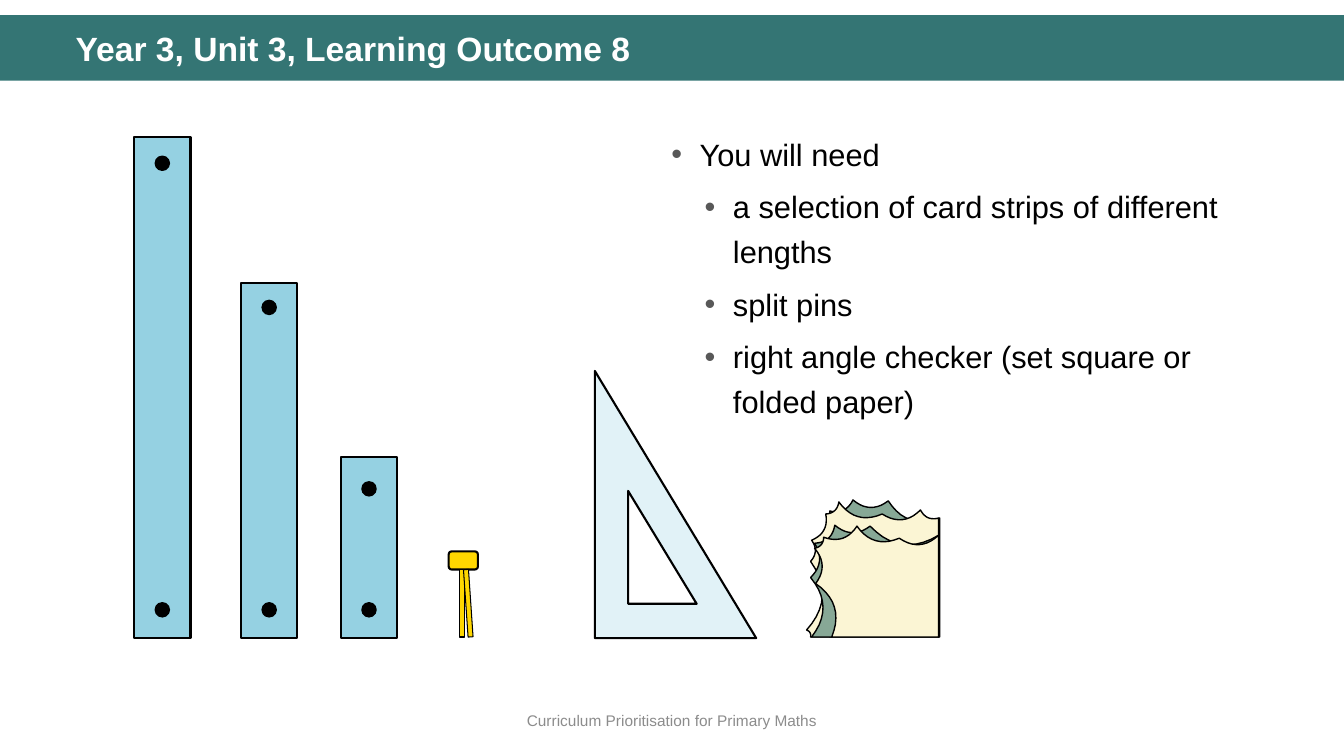
from dataclasses import dataclass
from typing import Optional

from lxml import etree
from pptx import Presentation
from pptx import util as u
from pptx.dml.color import RGBColor
from pptx.enum import shapes, text
from pptx.oxml import ns


@dataclass(frozen=True)
class Theme:
    font: str = "Arial"
    bar: str = "347574"
    white: str = "FFFFFF"
    ink: str = "000000"
    footer: str = "8C8C8C"
    bullet: str = "585858"
    strip: str = "95D1E2"
    pin: str = "FFD700"
    square: str = "B8E1EC"
    paper_front: str = "FBF5D4"
    paper_back: str = "87A896"
    title_size: float = 24
    body_size: float = 22
    footer_size: float = 11


@dataclass(frozen=True)
class Strip:
    left: float
    top: float
    hole_top: float


@dataclass(frozen=True)
class PaperLayer:
    """Tips of the torn edge, from bottom left to top right."""
    fill: str
    tips: list


THEME = Theme()
SHAPE = shapes.MSO_SHAPE
BASE = 6.33
STRIP_WIDTH, HOLE_SIZE, LOWER_HOLE_TOP = 0.56, 0.14, 5.98
STRIPS = [Strip(2.39, 2.81, 2.98), Strip(3.38, 4.53, 4.78), Strip(1.33, 1.36, 1.55)]
NEEDS = [
    (0, "You will need"),
    (1, "a selection of card strips of different lengths"),
    (1, "split pins"),
    (1, "right angle checker (set square or folded paper)"),
]
PAPER_BASE, TEAR_DEPTH = 6.32, 0.2
FOLDED_PAPER = [
    PaperLayer(THEME.paper_back, [(8.23, 5.07), (8.46, 4.96), (8.81, 4.97), (9.32, 5.14)]),
    PaperLayer(THEME.paper_front, [(8.04, 6.32), (8, 6.25), (8.04, 5.57), (8.05, 5.36), (8.19, 5.1),
                                   (8.32, 4.98), (8.75, 5.1), (9.13, 5.06), (9.31, 5.14)]),
    PaperLayer(THEME.paper_back, [(8.05, 6.32), (8.04, 5.73), (8.08, 5.39), (8.28, 5.21),
                                  (8.63, 5.22), (9.31, 5.31)]),
    PaperLayer(THEME.paper_front, [(8.25, 6.32), (8.09, 5.79), (8.08, 5.44), (8.17, 5.33),
                                   (8.5, 5.22), (8.92, 5.34), (9.31, 5.31)]),
]
SET_SQUARE = [[(6.23, 4.87), (6.23, 5.99), (6.91, 5.99)],
              [(5.9, 3.68), (7.5, BASE), (5.9, BASE)]]


def place(shape, left: float, top: float, width: float, height: float) -> None:
    shape.left, shape.top = u.Inches(left), u.Inches(top)
    shape.width, shape.height = u.Inches(width), u.Inches(height)


def paint(shape, fill: str, line_width: Optional[float] = None) -> None:
    shape.shadow.inherit = False
    shape.fill.solid()
    shape.fill.fore_color.rgb = RGBColor.from_string(fill)
    if line_width is None:
        shape.line.fill.background()
    else:
        shape.line.color.rgb = RGBColor.from_string(THEME.ink)
        shape.line.width = u.Pt(line_width)


def add_preset(parent, kind, left: float, top: float, width: float, height: float,
               fill: str, line_width: Optional[float] = None):
    shape = parent.add_shape(kind, *(u.Inches(n) for n in (left, top, width, height)))
    paint(shape, fill, line_width)
    return shape


def add_outline(parent, contours: list, fill: str, line_width: float):
    contours = [[(x * 1000, y * 1000) for x, y in contour] for contour in contours]
    builder = parent.build_freeform(*contours[0][0], scale=u.Inches(1) / 1000)
    for index, points in enumerate(contours):
        if index:
            builder.move_to(*points[0])
        builder.add_line_segments(points[1:], close=True)
    shape = builder.convert_to_shape()
    paint(shape, fill, line_width)
    return shape


def tear(tips: list, steps: int = 10) -> list:
    """Join the tips by arcs that cut into the paper, then close along its base."""
    points = [tips[0]]
    for (x1, y1), (x2, y2) in zip(tips, tips[1:]):
        for i in range(1, steps + 1):
            t = i / steps
            depth = 4 * t * (1 - t) * TEAR_DEPTH
            points.append((x1 + t * (x2 - x1) - depth * (y2 - y1),
                           y1 + t * (y2 - y1) + depth * (x2 - x1)))
    return points + [(tips[-1][0], PAPER_BASE), (tips[0][0], PAPER_BASE)]


def write(paragraph, content: str, *, size: float, color: str, bold: bool = False,
          align=text.PP_ALIGN.LEFT, spacing: float = 1.0, before: float = 0) -> None:
    paragraph.text = content
    paragraph.alignment = align
    paragraph.line_spacing, paragraph.space_before = spacing, u.Pt(before)
    font = paragraph.runs[0].font
    font.name, font.size, font.bold = THEME.font, u.Pt(size), bold
    font.color.rgb = RGBColor.from_string(color)


def add_bullet(paragraph, margin: float, hanging: float) -> None:
    properties = paragraph._p.get_or_add_pPr()
    properties.set("marL", str(u.Inches(margin)))
    properties.set("indent", str(-u.Inches(hanging)))
    color = etree.SubElement(properties, ns.qn("a:buClr"))
    etree.SubElement(color, ns.qn("a:srgbClr"), val=THEME.bullet)
    etree.SubElement(properties, ns.qn("a:buFont"), typeface=THEME.font)
    etree.SubElement(properties, ns.qn("a:buChar"), char="•")


def prepare_frame(shape, anchor):
    frame = shape.text_frame
    frame.word_wrap, frame.auto_size = True, text.MSO_AUTO_SIZE.NONE
    frame.vertical_anchor = anchor
    return frame


def add_strip(slide, strip: Strip) -> None:
    group = slide.shapes.add_group_shape().shapes
    add_preset(group, SHAPE.RECTANGLE, strip.left, strip.top, STRIP_WIDTH, BASE - strip.top, THEME.strip, 1.5)
    hole_left = strip.left + (STRIP_WIDTH - HOLE_SIZE) / 2
    for top in (LOWER_HOLE_TOP, strip.hole_top):
        add_preset(group, SHAPE.OVAL, hole_left, top, HOLE_SIZE, HOLE_SIZE, THEME.ink, 1)


def main() -> None:
    presentation = Presentation()
    presentation.slide_width, presentation.slide_height = u.Inches(13.33), u.Inches(7.5)
    slide = presentation.slides.add_slide(presentation.slide_layouts[1])

    # Title on its bar
    bar = add_preset(slide.shapes, SHAPE.RECTANGLE, 0, 0.15, 13.33, 0.65, THEME.bar)
    slide.shapes._spTree.insert(2, bar._element)
    title = slide.shapes.title
    place(title, 0.65, 0.27, 12.32, 0.47)
    write(prepare_frame(title, text.MSO_ANCHOR.TOP).paragraphs[0], "Year 3, Unit 3, Learning Outcome 8",
          size=THEME.title_size, color=THEME.white, bold=True, spacing=0.9)

    # Equipment list
    body = slide.placeholders[1]
    place(body, 6.56, 1.22, 5.96, 5.77)
    frame = prepare_frame(body, text.MSO_ANCHOR.TOP)
    for index, (level, need) in enumerate(NEEDS):
        paragraph = frame.add_paragraph() if index else frame.paragraphs[0]
        paragraph.level = level
        add_bullet(paragraph, 0.28 + 0.33 * level, 0.28)
        write(paragraph, need, size=THEME.body_size, color=THEME.ink, spacing=1.2, before=6 if index else 0)

    # Split pin
    pin = slide.shapes.add_group_shape().shapes
    add_preset(pin, SHAPE.ROUNDED_RECTANGLE, 4.45, 5.47, 0.29, 0.18, THEME.pin, 1.5)
    for left, rotation in ((4.56, 0), (4.62, 356.1)):
        leg = add_preset(pin, SHAPE.RECTANGLE, left, 5.65, 0.05, 0.67, THEME.pin, 0.75)
        leg.rotation = rotation

    # Card strips
    for strip in STRIPS:
        add_strip(slide, strip)

    # Right angle checkers
    paper = slide.shapes.add_group_shape().shapes
    for layer in FOLDED_PAPER:
        add_outline(paper, [tear(layer.tips)], layer.fill, 1)
    square = add_outline(slide.shapes, SET_SQUARE, THEME.square, 1.5)
    color = square._element.spPr.find(ns.qn("a:solidFill"))[0]
    etree.SubElement(color, ns.qn("a:alpha"), val="41000")

    # Footer
    footer = slide.shapes.add_textbox(0, u.Inches(6.95), u.Inches(13.33), u.Inches(0.4))
    write(prepare_frame(footer, text.MSO_ANCHOR.MIDDLE).paragraphs[0], "Curriculum Prioritisation for Primary Maths",
          size=THEME.footer_size, color=THEME.footer, align=text.PP_ALIGN.CENTER)

    presentation.save("out.pptx")


if __name__ == "__main__":
    main()
